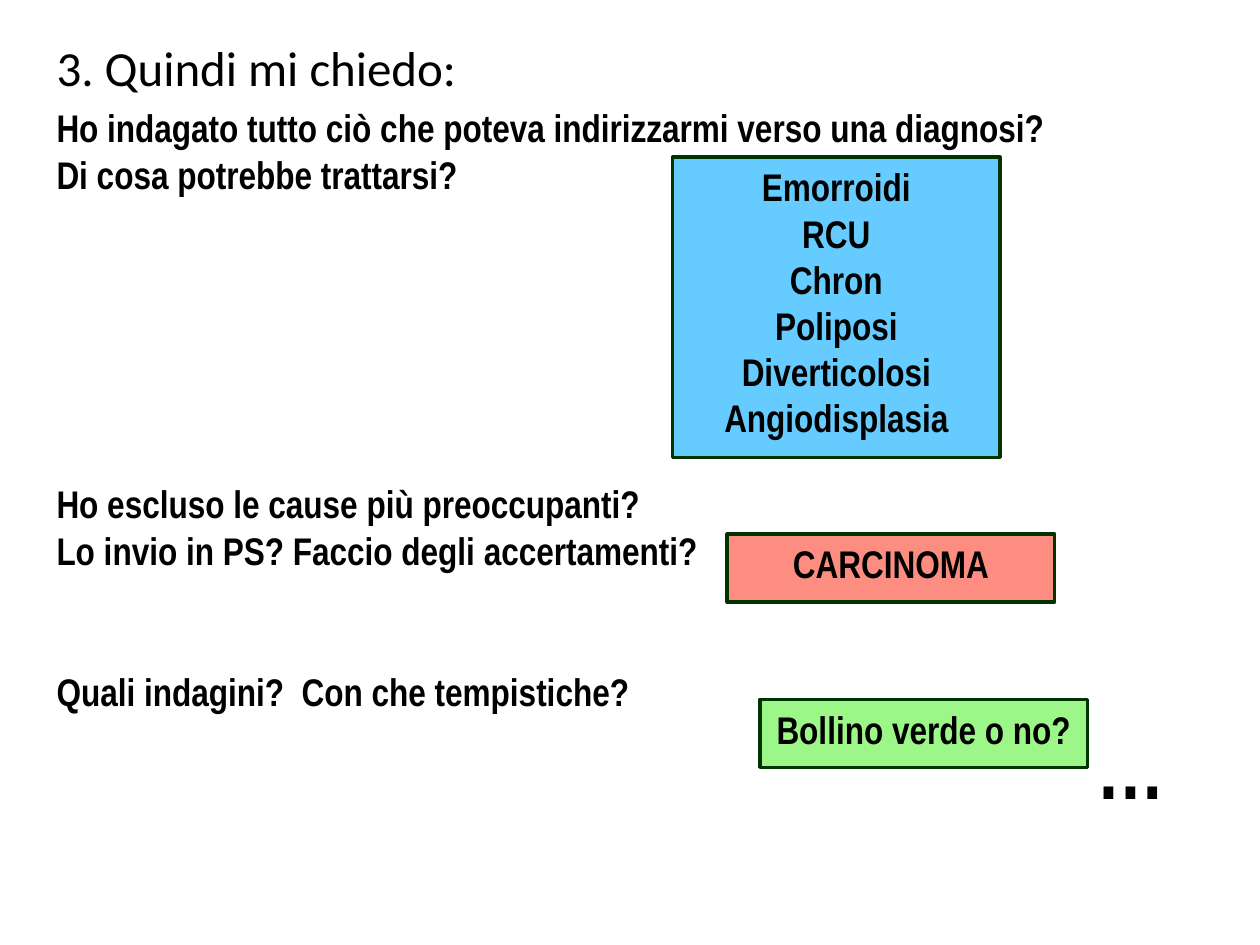
from pptx import Presentation
from pptx.dml.color import RGBColor
from pptx.enum.shapes import MSO_SHAPE
from pptx.enum.text import MSO_ANCHOR, PP_ALIGN
from pptx.util import Cm, Pt

THEME = {
    "title_font": "Calibri", "font": "Arial Narrow",
    "title": 28, "body": 22, "dots": 48,
    "text": "000000", "border": "003300",
    "blue": "66CCFF", "red": "FD8D81", "green": "9DF688",
}

# Questions: text, line spacing, space before in points
TITLE = "3. Quindi mi chiedo:"
QUESTIONS = [
    ("Ho indagato tutto ciò che poteva indirizzarmi verso una diagnosi?", 1, 4.4),
    ("Di cosa potrebbe trattarsi?", 0.85, 4.4),
    ("Ho escluso le cause più preoccupanti?", 0.85, 165.6),
    ("Lo invio in PS? Faccio degli accertamenti?", 0.85, 4.4),
    ("Quali indagini?  Con che tempistiche?", 0.85, 58.1),
]
DOTS = "…"

# Answer boxes: lines, fill, left, top, height in cm
ANSWERS = [
    (["Emorroidi", "RCU", "Chron", "Poliposi", "Diverticolosi", "Angiodisplasia"],
     "blue", 13.56, 3.17, 6.05),
    (["CARCINOMA"], "red", 14.66, 10.77, 1.37),
    (["Bollino verde o no?"], "green", 15.32, 14.1, 1.37),
]
ANSWER_WIDTH = 6.6


def color(name):
    return RGBColor.from_string(THEME[name])


def style(p, size="body", font="font", bold=True, align=PP_ALIGN.LEFT,
          spacing=1, before=0):
    p.alignment = align
    p.line_spacing = spacing
    p.space_before = Pt(before)
    for r in p.runs:
        r.font.name = THEME[font]
        r.font.size = Pt(THEME[size])
        r.font.bold = bold
        r.font.color.rgb = color("text")


prs = Presentation()
prs.slide_width, prs.slide_height = Cm(25.4), Cm(19.05)
s = prs.slides.add_slide(prs.slide_layouts[6])

# Title, questions and closing dots
tf = s.shapes.add_textbox(Cm(0.89), Cm(0.64), Cm(22.86), Cm(16.43)).text_frame
tf.word_wrap = True
tf.text = "\n".join([TITLE, *(text for text, *_ in QUESTIONS), DOTS])
title, *questions, dots = tf.paragraphs
style(title, "title", "title_font", bold=False, before=2.5)
for p, (_, spacing, before) in zip(questions, QUESTIONS):
    style(p, spacing=spacing, before=before)
style(dots, "dots", align=PP_ALIGN.RIGHT, spacing=0.85, before=9.6)

# Answer boxes
for lines, fill, left, top, height in ANSWERS:
    sp = s.shapes.add_shape(MSO_SHAPE.RECTANGLE, Cm(left), Cm(top),
                            Cm(ANSWER_WIDTH), Cm(height))
    sp.shadow.inherit = False
    sp.fill.solid()
    sp.fill.fore_color.rgb = color(fill)
    sp.line.color.rgb = color("border")
    sp.line.width = Pt(2)
    tf = sp.text_frame
    tf.word_wrap = True
    tf.vertical_anchor = MSO_ANCHOR.TOP
    tf.text = "\n".join(lines)
    for p in tf.paragraphs:
        style(p, align=PP_ALIGN.CENTER)

prs.save("out.pptx")
